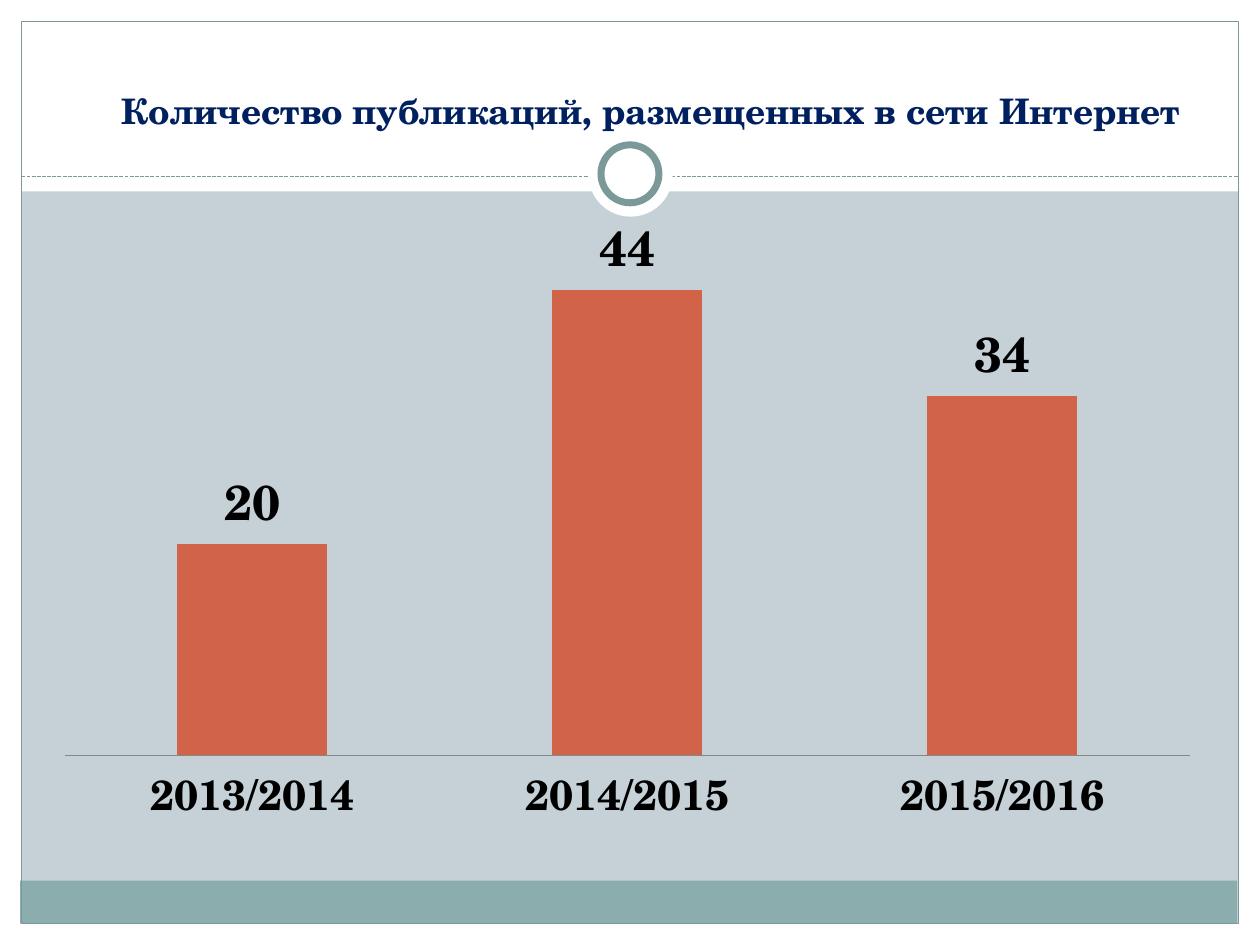
from lxml import etree
from pptx import Presentation
from pptx.chart.data import CategoryChartData
from pptx.dml.color import RGBColor
from pptx.enum import chart as charts, dml, shapes, text
from pptx.oxml import parse_xml
from pptx.oxml.ns import nsdecls, qn
from pptx.util import Inches, Pt

WHITE = RGBColor(0xFF, 0xFF, 0xFF)
BLACK = RGBColor(0, 0, 0)
NAVY = RGBColor(0x00, 0x20, 0x60)
BACKGROUND = RGBColor(0xC5, 0xD1, 0xD7)
TEAL = RGBColor(0x8C, 0xAD, 0xAE)
DARK_TEAL = RGBColor(0x7C, 0x99, 0x9A)
ORANGE = RGBColor(0xD1, 0x63, 0x49)
AXIS_GRAY = RGBColor(0x86, 0x86, 0x86)
FONT = "TeX Gyre Schola"

deck = Presentation()
deck.slide_width, deck.slide_height = Inches(10), Inches(7.5)
page = deck.slides.add_slide(deck.slide_layouts[5])
page.background.fill.solid()
page.background.fill.fore_color.rgb = BACKGROUND


def add_figure(kind, bounds, fill=None, line=None, width=0.75):
    figure = page.shapes.add_shape(kind, *[Inches(value) for value in bounds])
    figure.shadow.inherit = False
    if fill is None:
        figure.fill.background()
    else:
        figure.fill.solid()
        figure.fill.fore_color.rgb = fill
    if line is None:
        figure.line.fill.background()
    else:
        figure.line.color.rgb = line
        figure.line.width = Pt(width)


# Margins, header and footer bands
RECTANGLE, OVAL = shapes.MSO_SHAPE.RECTANGLE, shapes.MSO_SHAPE.OVAL
for bounds, color in [
    ((0, 7.33, 10, 0.17), WHITE),
    ((0, 0, 10, 1.52), WHITE),
    ((0, 0, 0.17, 7.5), WHITE),
    ((9.83, 0, 0.17, 7.5), WHITE),
    ((0.16, 6.99, 9.66, 0.34), TEAL),
]:
    add_figure(RECTANGLE, bounds, fill=color)
add_figure(RECTANGLE, (0.17, 0.17, 9.66, 7.16), line=DARK_TEAL)

# Dashed divider with a ring in the middle
divider = page.shapes.add_connector(
    shapes.MSO_CONNECTOR.STRAIGHT, Inches(0.17), Inches(1.4), Inches(9.83), Inches(1.4))
divider.line.color.rgb = DARK_TEAL
divider.line.width = Pt(0.75)
divider.line.dash_style = dml.MSO_LINE.SQUARE_DOT
etree.SubElement(divider._element.spPr, qn("a:effectLst"))
add_figure(OVAL, (4.67, 1.05, 0.67, 0.67), fill=WHITE)
add_figure(OVAL, (4.77, 1.15, 0.46, 0.46), fill=WHITE, line=DARK_TEAL, width=4)

# Title, brought in front of the header band
title = page.shapes.title
page.shapes._spTree.append(title._element)
title.left, title.top = Inches(0.5), Inches(0.42)
title.width, title.height = Inches(9.33), Inches(0.83)
frame = title.text_frame
frame.text = "Количество публикаций, размещенных в сети Интернет"
frame.word_wrap = True
frame.auto_size = text.MSO_AUTO_SIZE.NONE
frame.vertical_anchor = text.MSO_ANCHOR.BOTTOM
frame.margin_bottom = Inches(0.21)
para = frame.paragraphs[0]
para.alignment = text.PP_ALIGN.CENTER
para.line_spacing = 0.8
para.font.name, para.font.size, para.font.bold = FONT, Pt(20.1), True
para.font.color.rgb = NAVY

# Column chart
data = CategoryChartData()
data.categories = ["2013/2014", "2014/2015", "2015/2016"]
data.add_series("Series 1", [20, 44, 34])
chart = page.shapes.add_chart(
    charts.XL_CHART_TYPE.COLUMN_CLUSTERED,
    Inches(0.33), Inches(1.67), Inches(9.3), Inches(5), data).chart
chart.has_legend = False
chart.has_title = False
chart.font.name, chart.font.size = FONT, Pt(10)
chart.font.color.rgb = BLACK

values = chart.value_axis
values.minimum_scale, values.maximum_scale = 0, 50
values.has_major_gridlines = False
values.visible = False
years = chart.category_axis
years.major_tick_mark = charts.XL_TICK_MARK.NONE
years.format.line.color.rgb = AXIS_GRAY
years.format.line.width = Pt(0.75)

plot = chart.plots[0]
plot.gap_width = 150
plot.vary_by_categories = False
series = plot.series[0]
series.format.fill.solid()
series.format.fill.fore_color.rgb = ORANGE
labels = series.data_labels
labels.show_value = True
labels.position = charts.XL_LABEL_POSITION.OUTSIDE_END
for font, size in [(years.tick_labels.font, 24), (labels.font, 28)]:
    font.name, font.size, font.bold = FONT, Pt(size), True
    font.color.rgb = BLACK

# Fixed inner plot area, as fractions of the chart
plot_area = chart._chartSpace.chart.plotArea
for old_layout in plot_area.findall(qn("c:layout")):
    plot_area.remove(old_layout)
plot_area.insert(0, parse_xml(
    f'<c:layout {nsdecls("c")}><c:manualLayout><c:layoutTarget val="inner"/>'
    '<c:xMode val="edge"/><c:yMode val="edge"/><c:x val="0.02"/><c:y val="0.025"/>'
    '<c:w val="0.96"/><c:h val="0.84"/></c:manualLayout></c:layout>'))

deck.save("out.pptx")
